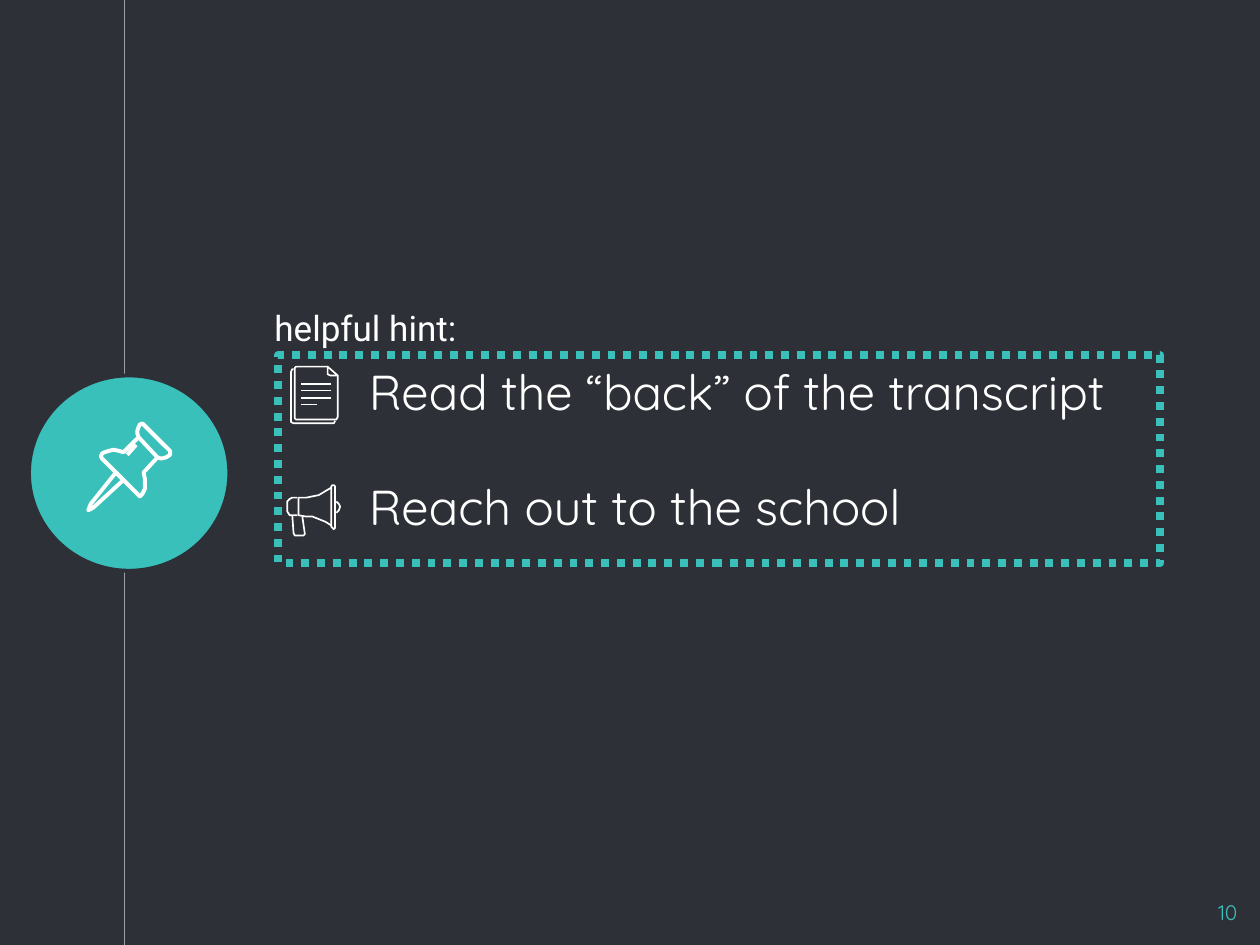
from lxml import etree
from pptx import Presentation
from pptx.dml.color import RGBColor
from pptx.enum.dml import MSO_LINE
from pptx.enum.shapes import MSO_CONNECTOR, MSO_SHAPE
from pptx.enum.text import MSO_ANCHOR, PP_ALIGN
from pptx.oxml.ns import qn
from pptx.util import Inches, Pt

DARK = RGBColor(0x2E, 0x30, 0x37)
TEAL = RGBColor(0x39, 0xC0, 0xBA)
WHITE = RGBColor(0xFF, 0xFF, 0xFF)
GRAY = RGBColor(0x99, 0x9F, 0xA9)
STRAIGHT = MSO_CONNECTOR.STRAIGHT
OVAL = MSO_SHAPE.OVAL
RECTANGLE = MSO_SHAPE.RECTANGLE
DOTTED = MSO_LINE.ROUND_DOT
TOP = MSO_ANCHOR.TOP
LEFT, RIGHT = PP_ALIGN.LEFT, PP_ALIGN.RIGHT

PIN = [
    ([(22, 39), (2, 64), (0, 69), (4, 67), (28, 45)], True),
    ([(40, 11), (55, 27), (58, 28), (62, 27), (65, 25), (65, 22), (44, 1),
      (43, 0), (41, 1), (40, 3), (39, 6), (39, 8)], True),
    ([(40, 11), (28, 23), (25, 22), (20, 21), (16, 22), (13, 23), (11, 24),
      (10, 26), (11, 28), (40, 57), (41, 58), (43, 56), (45, 52), (45, 44),
      (44, 39), (55, 27)], False),
    ([(31, 25), (38, 17)], False),
]
DOCUMENT = [
    ([(35, 43), (34, 45), (33, 45), (2, 45), (0, 44), (0, 43), (0, 4),
      (1, 2), (2, 2)], False),
    ([(37, 7), (37, 40), (36, 42), (35, 42), (4, 42), (3, 41), (3, 1),
      (4, 0), (29, 0)], False),
    ([(29, 6), (29, 0), (37, 7), (31, 7)], True),
    *[([(right, y), (8, y)], False)
      for right, y in [(32, 14), (32, 19), (32, 25), (21, 30)]],
]
MEGAPHONE = [
    ([(4, 24), (5, 38), (6, 40), (13, 40), (14, 39), (12, 25)], False),
    ([(39, 22), (41, 20), (42, 17), (41, 15), (39, 13)], False),
    ([(8, 10), (4, 10), (2, 11), (0, 13), (0, 21), (2, 24), (4, 24),
      (8, 24)], False),
    ([(35, 2), (30, 5), (25, 8), (20, 9), (15, 10), (9, 10), (9, 24),
      (15, 25), (20, 25), (25, 27), (30, 29), (35, 32)], False),
    ([(37, 0), (36, 0), (35, 1), (35, 33), (36, 34), (37, 35), (38, 34),
      (38, 1)], True),
]


def add_line(shapes, x1, y1, x2, y2, color, weight):
    line = shapes.add_connector(
        STRAIGHT, Inches(x1), Inches(y1), Inches(x2), Inches(y2))
    line.line.color.rgb = color
    line.line.width = Pt(weight)
    etree.SubElement(line._element.spPr, qn("a:effectLst"))


def add_icon(s, left, top, strokes, weight):
    shapes = s.shapes.add_group_shape().shapes
    for points, closed in strokes:
        if len(points) == 2:
            (x1, y1), (x2, y2) = points
            add_line(shapes, left + x1 / 100, top + y1 / 100,
                     left + x2 / 100, top + y2 / 100, WHITE, weight)
            continue
        builder = shapes.build_freeform(*points[0], scale=Inches(0.01))
        builder.add_line_segments(points[1:], close=closed)
        sp = builder.convert_to_shape(Inches(left), Inches(top))
        sp.shadow.inherit = False
        sp.fill.background()
        sp.line.color.rgb = WHITE
        sp.line.width = Pt(weight)


def format_text(p, font, size, color, align=LEFT):
    p.alignment = align
    for r in p.runs:
        r.font.name = font
        r.font.size = Pt(size)
        r.font.color.rgb = color


def add_label(s, left, top, width, height, text, font, size, color, align=LEFT):
    tf = s.shapes.add_textbox(
        Inches(left), Inches(top), Inches(width), Inches(height)).text_frame
    tf.word_wrap = True
    tf.text = text
    format_text(tf.paragraphs[0], font, size, color, align)
    return tf


def add_pin_badge(s, left, top, width, height):
    sp = s.shapes.add_shape(
        OVAL, Inches(left), Inches(top), Inches(width), Inches(height))
    sp.shadow.inherit = False
    sp.fill.solid()
    sp.fill.fore_color.rgb = TEAL
    sp.line.color.rgb = DARK
    sp.line.width = Pt(2.25)
    add_icon(s, left + 0.47, top + 0.38, PIN, 2.25)


def add_hints(s, left, top, width, height):
    sp = s.shapes.add_shape(
        RECTANGLE, Inches(left), Inches(top), Inches(width), Inches(height))
    sp.shadow.inherit = False
    sp.fill.background()
    sp.line.color.rgb = TEAL
    sp.line.width = Pt(4.5)
    sp.line.dash_style = DOTTED
    tf = sp.text_frame
    tf.word_wrap = True
    tf.vertical_anchor = TOP
    tf.text = "Read the “back” of the transcript\nReach out to the school"
    for p in tf.paragraphs:
        format_text(p, "Quicksand", 28, WHITE)
        p._p.get_or_add_pPr().set("marL", str(Inches(0.62)))
    tf.paragraphs[1].space_before = Pt(32)
    add_label(s, left - 0.13, top - 0.44, 2.12, 0.44,
              "helpful hint:", "Roboto", 20, WHITE)
    add_icon(s, left + 0.1, top + 0.09, DOCUMENT, 0.96)
    add_icon(s, left + 0.07, top + 1.03, MEGAPHONE, 0.96)


def add_page_number(s, left, top, width, height):
    tf = add_label(s, left, top, width, height,
                   "10", "Quicksand", 12, TEAL, RIGHT)
    tf.margin_left = tf.margin_right = Inches(0.1)
    tf.margin_top = tf.margin_bottom = Inches(0.1)


def main():
    prs = Presentation()
    prs.slide_width = Inches(10)
    prs.slide_height = Inches(7.5)
    s = prs.slides.add_slide(prs.slide_layouts[6])
    s.background.fill.solid()
    s.background.fill.fore_color.rgb = DARK
    add_line(s.shapes, 0.99, 0, 0.99, 7.5, GRAY, 0.75)
    add_pin_badge(s, 0.23, 2.98, 1.59, 1.55)
    add_page_number(s, 9.32, 7.04, 0.6, 0.46)
    add_hints(s, 2.21, 2.82, 7, 1.65)
    prs.save("out.pptx")


if __name__ == "__main__":
    main()
